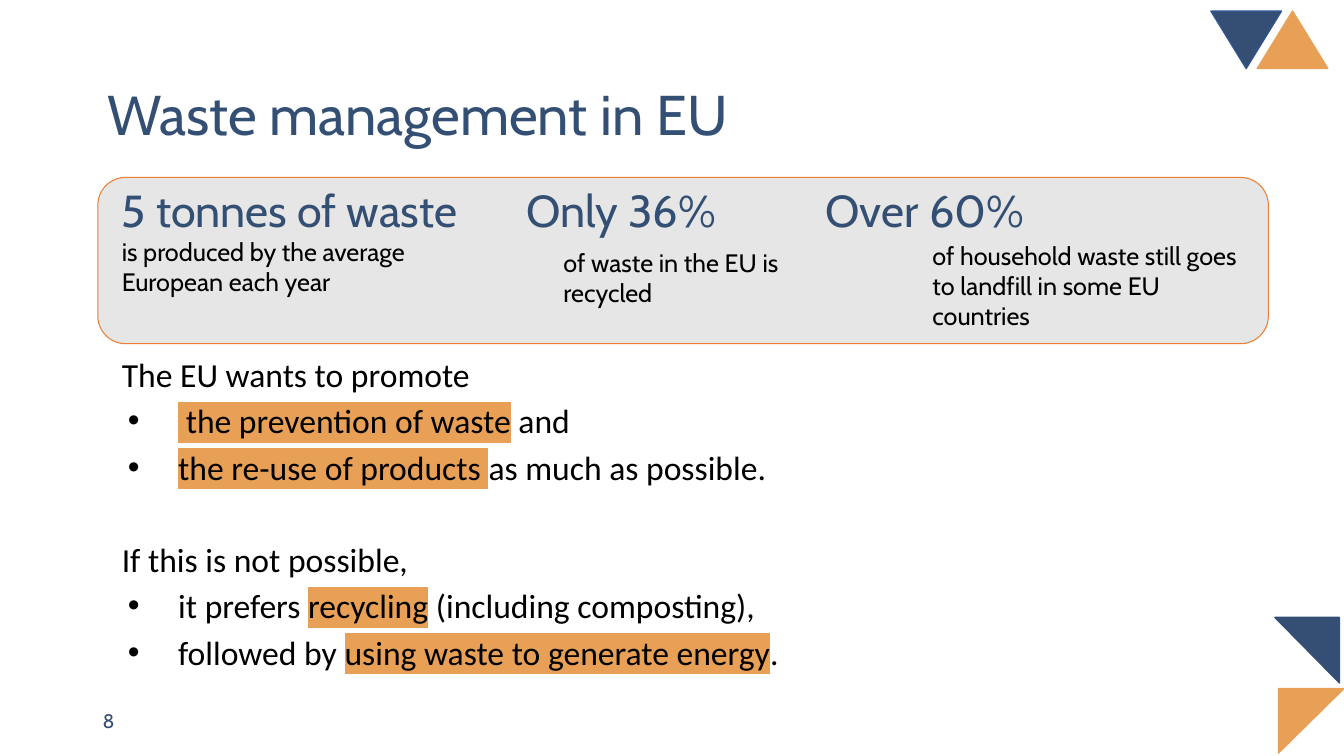
from dataclasses import dataclass

from lxml import etree
from pptx import Presentation
from pptx.dml.color import RGBColor
from pptx.enum import shapes, text
from pptx.oxml import ns
from pptx.util import Inches, Pt

NAVY = RGBColor(0x34, 0x4F, 0x74)
TRIANGLE_NAVY = RGBColor(0x35, 0x4F, 0x74)
EDGE_BLUE = RGBColor(0x31, 0x53, 0x8F)
AMBER = RGBColor(0xE8, 0x9F, 0x56)
ORANGE = RGBColor(0xED, 0x7D, 0x31)
GREY = RGBColor(0xE7, 0xE6, 0xE6)
BLACK = RGBColor(0, 0, 0)

Box = tuple[float, float, float, float]


@dataclass
class Triangle:
    box: Box
    rotation: int
    apex: float
    fill: RGBColor
    line: RGBColor


@dataclass
class Fact:
    headline: str
    headline_left: float
    headline_width: float
    detail: str
    detail_box: Box


@dataclass
class Line:
    runs: list[tuple[str, bool]]
    bullet: bool = True
    space_before: float = 10


TRIANGLES = [
    Triangle((12.47, 0.11, 0.7, 0.57), 0, 0.5, AMBER, AMBER),
    Triangle((12.68, 6.83, 0.65, 0.64), 180, 1, AMBER, AMBER),
    Triangle((12.64, 6.13, 0.65, 0.64), 270, 1, TRIANGLE_NAVY, TRIANGLE_NAVY),
    Triangle((12.01, 0.11, 0.7, 0.57), 180, 0.5, TRIANGLE_NAVY, EDGE_BLUE),
]

FACTS = [
    Fact("5 tonnes of waste", 1.11, 3.9,
         "is produced by the average European each year", (1.11, 2.29, 3.43, 0.71)),
    Fact("Only 36%", 5.12, 2.8,
         "of waste in the EU is recycled", (5.49, 2.4, 2.91, 0.71)),
    Fact("Over 60%", 8.09, 3.9,
         "of household waste still goes to landfill in some EU countries",
         (9.15, 2.33, 3.43, 1.01)),
]

POLICY = [
    Line([("The EU wants to promote", False)], bullet=False, space_before=0),
    Line([(" the prevention of waste", True), (" and", False)]),
    Line([("the re-use of products ", True), ("as much as possible.", False)]),
    Line([("If this is not possible,", False)], bullet=False, space_before=43),
    Line([("it prefers ", False), ("recycling", True), (" (including composting),", False)]),
    Line([("followed by ", False), ("using waste to generate energy", True), (".", False)]),
]


def add_shape(slide, kind, box: Box, fill: RGBColor, line: RGBColor, width: float, adjustment: float):
    shape = slide.shapes.add_shape(kind, *map(Inches, box))
    shape.shadow.inherit = False
    shape.adjustments[0] = adjustment
    shape.fill.solid()
    shape.fill.fore_color.rgb = fill
    shape.line.color.rgb = line
    shape.line.width = Pt(width)
    return shape


def add_frame(slide, box: Box, anchor=text.MSO_ANCHOR.TOP):
    frame = slide.shapes.add_textbox(*map(Inches, box)).text_frame
    frame.word_wrap = True
    frame.vertical_anchor = anchor
    return frame


def write(paragraph, content: str, *, size: float, color: RGBColor = BLACK,
          font: str = "Cabin", highlight: RGBColor | None = None) -> None:
    run = paragraph.add_run()
    run.text = content
    run.font.size = Pt(size)
    run.font.color.rgb = color
    run.font.name = font
    if highlight is not None:
        mark = etree.Element(ns.qn("a:highlight"))
        etree.SubElement(mark, ns.qn("a:srgbClr"), val=str(highlight))
        run.font.fill._xPr.find(ns.qn("a:solidFill")).addnext(mark)


def add_bullet(paragraph) -> None:
    properties = paragraph._p.get_or_add_pPr()
    properties.set("marL", str(Inches(0.56)))
    properties.set("indent", str(Inches(-0.5)))
    etree.SubElement(properties, ns.qn("a:buFont"), typeface="Arial")
    etree.SubElement(properties, ns.qn("a:buChar"), char="•")


def add_policy(slide) -> None:
    frame = add_frame(slide, (1.11, 3.54, 11.1, 3.2))
    for index, line in enumerate(POLICY):
        paragraph = frame.add_paragraph() if index else frame.paragraphs[0]
        if line.bullet:
            add_bullet(paragraph)
        paragraph.line_spacing = 0.8
        paragraph.space_before = Pt(line.space_before)
        for content, marked in line.runs:
            write(paragraph, content, size=24, font="Calibri",
                  highlight=AMBER if marked else None)


def add_facts(slide) -> None:
    add_shape(slide, shapes.MSO_SHAPE.ROUNDED_RECTANGLE, (0.97, 1.76, 11.61, 1.65),
              GREY, ORANGE, 0.75, 0.167)
    for fact in FACTS:
        headline = add_frame(slide, (fact.headline_left, 1.76, fact.headline_width, 0.64))
        write(headline.paragraphs[0], fact.headline, size=32, color=NAVY)
        detail = add_frame(slide, fact.detail_box)
        write(detail.paragraphs[0], fact.detail, size=18)


def main() -> None:
    presentation = Presentation()
    presentation.slide_width = Inches(13.33)
    presentation.slide_height = Inches(7.5)
    slide = presentation.slides.add_slide(presentation.slide_layouts[6])

    number = add_frame(slide, (0.92, 6.95, 3, 0.4), text.MSO_ANCHOR.MIDDLE)
    write(number.paragraphs[0], "8", size=14, color=TRIANGLE_NAVY)
    for triangle in TRIANGLES:
        shape = add_shape(slide, shapes.MSO_SHAPE.ISOSCELES_TRIANGLE, triangle.box,
                          triangle.fill, triangle.line, 1, triangle.apex)
        shape.rotation = triangle.rotation

    title = add_frame(slide, (0.97, 0.44, 11.5, 1.45), text.MSO_ANCHOR.MIDDLE).paragraphs[0]
    title.line_spacing = 0.9
    write(title, "Waste management in EU", size=40, color=NAVY)
    add_policy(slide)
    add_facts(slide)
    presentation.save("out.pptx")


if __name__ == "__main__":
    main()
